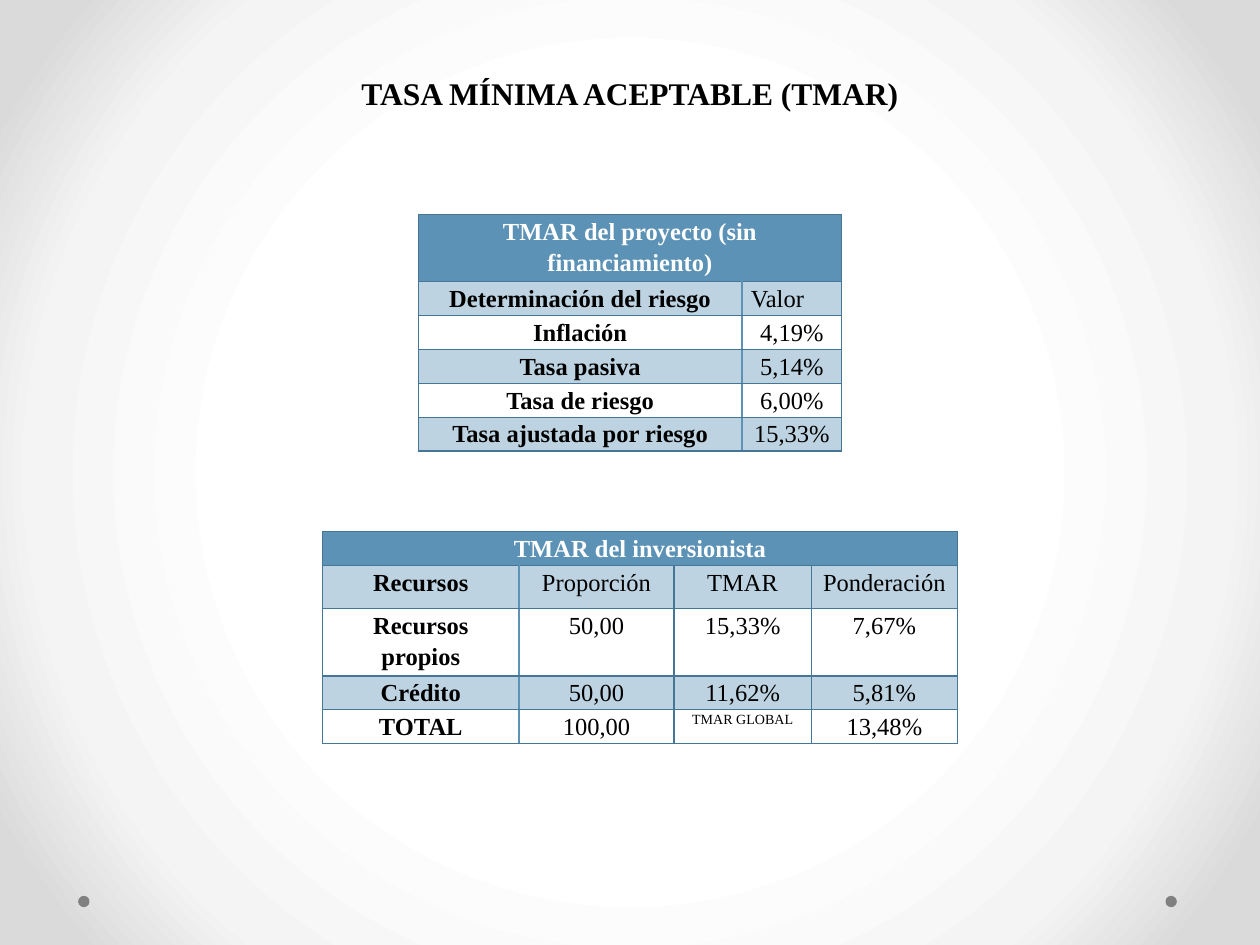
import pptx
import pptx.util
import pptx.oxml
import pptx.dml.color
import pptx.enum.shapes
import pptx.enum.text
from pptx.util import Inches, Pt

ALIGN = pptx.enum.text.PP_ALIGN
FONT = "Times New Roman"
NS = 'xmlns:a="http://schemas.openxmlformats.org/drawingml/2006/main"'
COLORS = {"text": "000000", "white": "FFFFFF", "header": "5C92B5",
          "border": "467695", "dot": "808080"}
BACKGROUND = [(50, "FFFFFF"), (76, "F4F4F4"), (92, "DADADA")]
TITLE = "TASA MÍNIMA ACEPTABLE (TMAR)"
TABLES = [
    {"at": (3.32, 1.7, 3.36, 1.88),
     "cols": [2.57, 0.79],
     "heights": [0.21] * 6,
     "rows": [["TMAR del proyecto (sin financiamiento)"],
              ["Determinación del riesgo", "Valor"],
              ["Inflación", "4,19%"],
              ["Tasa pasiva", "5,14%"],
              ["Tasa de riesgo", "6,00%"],
              ["Tasa ajustada por riesgo", "15,33%"]]},
    {"at": (2.56, 4.22, 5.04, 1.69),
     "cols": [1.56, 1.23, 1.09, 1.16],
     "heights": [0.21, 0.34, 0.21, 0.21, 0.21],
     "rows": [["TMAR del inversionista"],
              ["Recursos", "Proporción", "TMAR", "Ponderación"],
              ["Recursos propios", "50,00", "15,33%", "7,67%"],
              ["Crédito", "50,00", "11,62%", "5,81%"],
              ["TOTAL", "100,00", "TMAR GLOBAL", "13,48%"]]},
]
SMALL = {"TMAR GLOBAL": 8}
LEFT = {"Valor"}


def rgb(name):
    return pptx.dml.color.RGBColor.from_string(COLORS[name])


def write(tf, text, size, bold, color="text", align=ALIGN.CENTER):
    tf.text = text
    p = tf.paragraphs[0]
    p.alignment = align
    font = p.runs[0].font
    font.name, font.size, font.bold = FONT, Pt(size), bold
    font.color.rgb = rgb(color)
    return p


def set_background(s):
    stops = "".join(f'<a:gs pos="{pos * 1000}"><a:srgbClr val="{c}"/></a:gs>'
                    for pos, c in BACKGROUND)
    grad = pptx.oxml.parse_xml(
        f'<a:gradFill {NS} rotWithShape="1"><a:gsLst>{stops}</a:gsLst><a:path path="circle">'
        '<a:fillToRect l="50000" t="50000" r="50000" b="50000"/></a:path></a:gradFill>')
    fill = s.background.fill
    fill.solid()
    bg_pr = s.element.cSld.bg.bgPr
    bg_pr.replace(bg_pr[0], grad)


def add_borders(cell, first_column):
    tc_pr = cell._tc.get_or_add_tcPr()
    for i, side in enumerate("LRTB"):
        divider = first_column and side == "R"
        color, width = ("header", 1) if divider else ("border", 0.75)
        tc_pr.insert(i, pptx.oxml.parse_xml(
            f'<a:ln{side} {NS} w="{Pt(width)}"><a:solidFill>'
            f'<a:srgbClr val="{COLORS[color]}"/></a:solidFill></a:ln{side}>'))


def fill_cell(cell, row):
    if row and row % 2 == 0:
        cell.fill.background()
        return
    cell.fill.solid()
    cell.fill.fore_color.rgb = rgb("header")
    if row:
        color = cell._tc.tcPr.find(".//{*}srgbClr")
        color.append(pptx.oxml.parse_xml(f'<a:alpha {NS} val="40000"/>'))


def add_table(s, spec_data):
    rows, cols = spec_data["rows"], spec_data["cols"]
    at = [Inches(v) for v in spec_data["at"]]
    frame = s.shapes.add_table(len(rows), len(cols), *at)
    table = frame.table
    table.first_row = table.horz_banding = False
    for column, width in zip(table.columns, cols):
        column.width = Inches(width)
    for row, height in zip(table.rows, spec_data["heights"]):
        row.height = Inches(height)
    frame.height = at[3]
    table.cell(0, 0).merge(table.cell(0, len(cols) - 1))
    for i, texts in enumerate(rows):
        for j in range(len(cols)):
            cell = table.cell(i, j)
            cell.margin_left = cell.margin_right = Inches(0.07)
            cell.margin_top = cell.margin_bottom = 0
            fill_cell(cell, i)
            add_borders(cell, i > 0 and j == 0)
            if j < len(texts):
                text = texts[j]
                p = write(cell.text_frame, text, SMALL.get(text, 14), j == 0,
                          "text" if i else "white",
                          ALIGN.LEFT if text in LEFT else ALIGN.CENTER)
                p.line_spacing = 1.15


def main():
    prs = pptx.Presentation()
    prs.slide_width, prs.slide_height = Inches(10), Inches(7.5)
    s = prs.slides.add_slide(prs.slide_layouts[6])
    set_background(s)
    for x in (9.25, 0.62):
        dot = s.shapes.add_shape(pptx.enum.shapes.MSO_SHAPE.OVAL,
                                 Inches(x), Inches(7.11), Inches(0.09), Inches(0.09))
        dot.shadow.inherit = False
        dot.fill.solid()
        dot.fill.fore_color.rgb = rgb("dot")
        dot.line.fill.background()
    tf = s.shapes.add_textbox(Inches(0.5), 0, Inches(9), Inches(1.75)).text_frame
    tf.word_wrap = True
    tf.vertical_anchor = pptx.enum.text.MSO_ANCHOR.BOTTOM
    tf.margin_bottom = Inches(0.86)
    write(tf, TITLE, 18, True)
    for data in TABLES:
        add_table(s, data)
    prs.save("out.pptx")


if __name__ == "__main__":
    main()
